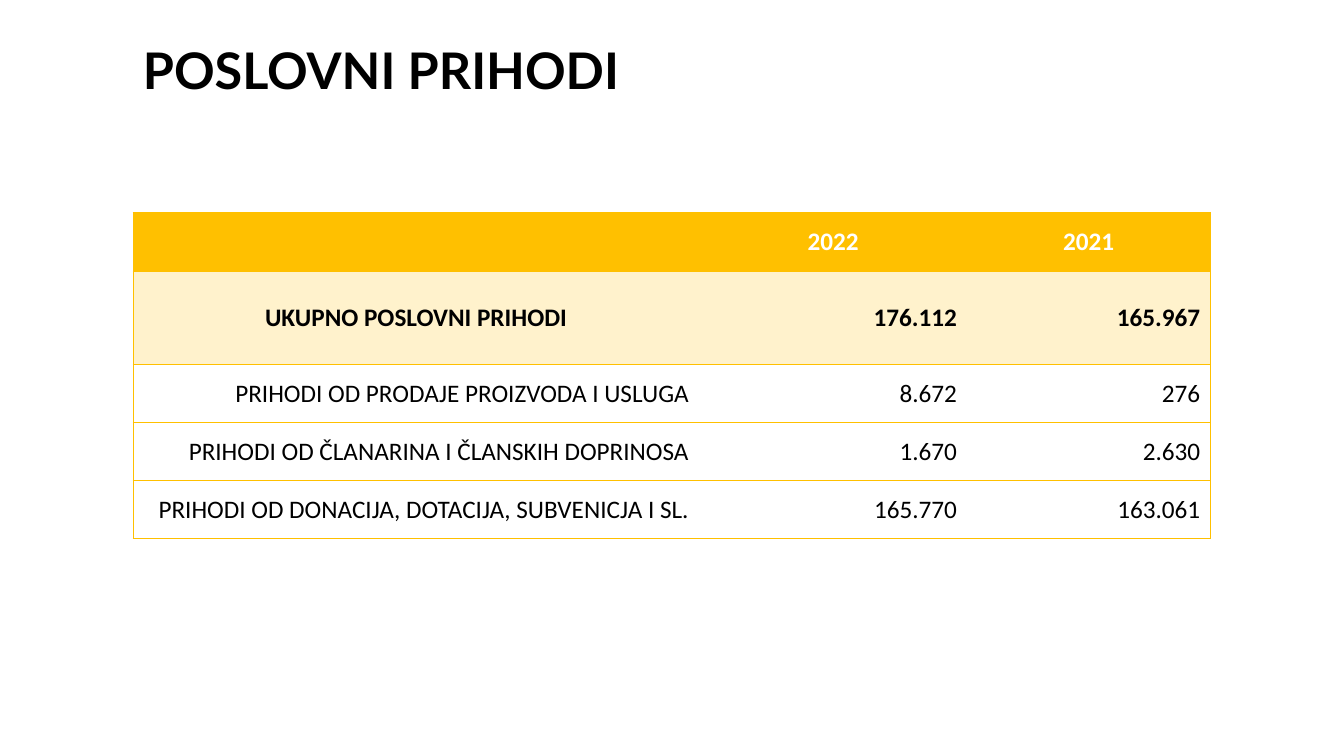
from lxml import etree
from pptx import Presentation
from pptx.dml.color import RGBColor
from pptx.enum.text import MSO_ANCHOR, PP_ALIGN
from pptx.oxml.ns import qn
from pptx.util import Cm, Pt

CENTER, RIGHT, LEFT = PP_ALIGN.CENTER, PP_ALIGN.RIGHT, PP_ALIGN.LEFT
MIDDLE = MSO_ANCHOR.MIDDLE

BLACK = RGBColor(0x00, 0x00, 0x00)
WHITE = RGBColor(0xFF, 0xFF, 0xFF)
GOLD = RGBColor(0xFF, 0xC0, 0x00)
CREAM = RGBColor(0xFF, 0xF2, 0xCC)

COL_WIDTHS = (14.27, 6.75, 6.13)
ROW_HEIGHTS = (1.47, 2.36, 1.46, 1.46, 1.46)
INCOME = (
    ("", "2022", "2021"),
    ("UKUPNO POSLOVNI PRIHODI", "176.112", "165.967"),
    ("PRIHODI OD PRODAJE PROIZVODA I USLUGA", "8.672", "276"),
    ("PRIHODI OD ČLANARINA I ČLANSKIH DOPRINOSA", "1.670", "2.630"),
    ("PRIHODI OD DONACIJA, DOTACIJA, SUBVENICJA I SL.", "165.770", "163.061"),
)


class SlideBuilder:
    title_font, body_font = "Lato", "Calibri"
    title_size, body_size = Pt(36), Pt(18)
    border_width = Pt(0.5)

    def __init__(self, s):
        self.s = s

    def run(self, p, text, font, size, color, bold):
        r = p.add_run()
        r.text = text
        r.font.name, r.font.size, r.font.bold = font, size, bold
        r.font.color.rgb = color

    def title(self, text, left, top, width, height):
        sp = self.s.shapes.add_textbox(Cm(left), Cm(top), Cm(width), Cm(height))
        tf = sp.text_frame
        tf.word_wrap = True
        tf.vertical_anchor = MIDDLE
        p = tf.paragraphs[0]
        p.alignment, p.line_spacing = LEFT, 0.9
        self.run(p, text, self.title_font, self.title_size, BLACK, True)

    def borders(self, cell, first, last):
        """Rule the cell above and below, and at the outer sides of the table."""
        tc_pr = cell._tc.get_or_add_tcPr()
        sides = (("L", first), ("R", last), ("T", True), ("B", True))
        for i, (side, visible) in enumerate(sides):
            ln = etree.Element(qn(f"a:ln{side}"), w=str(self.border_width))
            if visible:
                fill = etree.SubElement(ln, qn("a:solidFill"))
                etree.SubElement(fill, qn("a:srgbClr"), val=str(GOLD))
            else:
                etree.SubElement(ln, qn("a:noFill"))
            tc_pr.insert(i, ln)

    def cell(self, cell, text, row, col):
        cell.vertical_anchor = MIDDLE
        if row < 2:
            cell.fill.solid()
            cell.fill.fore_color.rgb = (GOLD, CREAM)[row]
        else:
            cell.fill.background()
        self.borders(cell, col == 0, col == len(COL_WIDTHS) - 1)
        p = cell.text_frame.paragraphs[0]
        p.alignment = CENTER if row == 0 or (row, col) == (1, 0) else RIGHT
        if text:
            color = WHITE if row == 0 else BLACK
            self.run(p, text, self.body_font, self.body_size, color, row < 2)

    def table(self, rows, left, top):
        frame = self.s.shapes.add_table(
            len(rows), len(COL_WIDTHS), Cm(left), Cm(top),
            Cm(sum(COL_WIDTHS)), Cm(sum(ROW_HEIGHTS)))
        table = frame.table
        table.horz_banding = False
        for column, width in zip(table.columns, COL_WIDTHS):
            column.width = Cm(width)
        for i, (texts, height) in enumerate(zip(rows, ROW_HEIGHTS)):
            table.rows[i].height = Cm(height)
            for j, text in enumerate(texts):
                self.cell(table.cell(i, j), text, i, j)


def main():
    prs = Presentation()
    prs.slide_width, prs.slide_height = Cm(33.87), Cm(19.05)
    builder = SlideBuilder(prs.slides.add_slide(prs.slide_layouts[6]))
    builder.title("POSLOVNI PRIHODI", 3.35, 0, 29.21, 3.68)
    builder.table(INCOME, 3.35, 5.36)
    prs.save("out.pptx")


if __name__ == "__main__":
    main()
